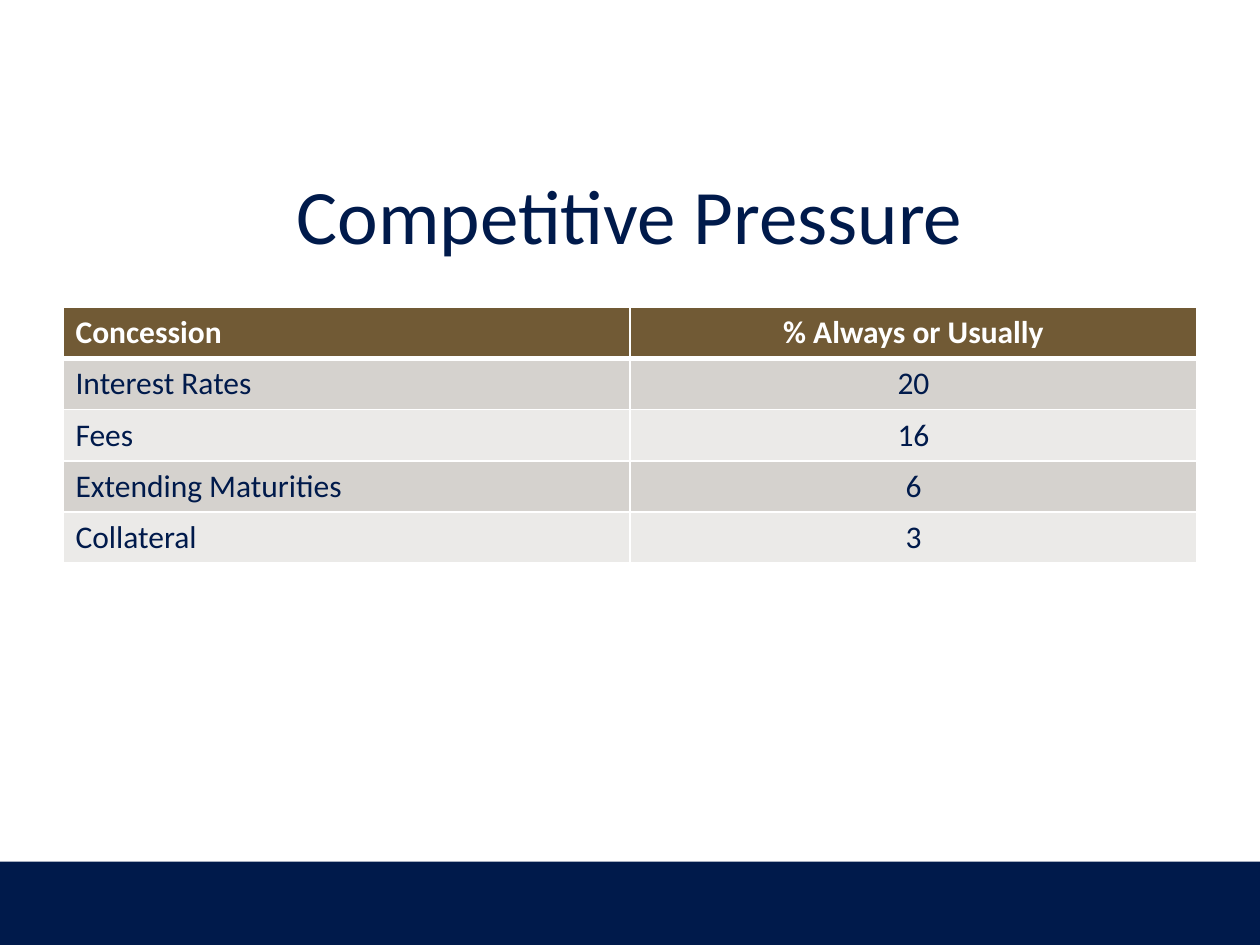
from lxml import etree
from pptx import Presentation
from pptx import util as u
from pptx.dml.color import RGBColor
from pptx.enum import shapes, text
from pptx.oxml import ns

NAVY, BROWN, WHITE = "001A4B", "715A35", "FFFFFF"
BANDS = ("D5D2CE", "EBEAE8")
ROWS = [
    ("Concession", "% Always or Usually"),
    ("Interest Rates", "20"),
    ("Fees", "16"),
    ("Extending Maturities", "6"),
    ("Collateral", "3"),
]
MARGIN, CONTENT_WIDTH = u.Cm(1.27), u.Cm(22.86)


def color(value):
    return RGBColor.from_string(value)


def paint(item, value):
    item.fill.solid()
    item.fill.fore_color.rgb = color(value)


def write(frame, words, align, shade, **formats):
    para = frame.paragraphs[0]
    para.alignment = align
    span = para.add_run()
    span.text = words
    span.font.color.rgb = color(shade)
    for name, value in {"name": "Calibri", **formats}.items():
        setattr(span.font, name, value)


def add_footer_band(page, deck):
    height = u.Cm(1.68)
    band = page.shapes.add_shape(
        shapes.MSO_SHAPE.RECTANGLE, 0, deck.slide_height - height, deck.slide_width, height)
    band.shadow.inherit = False
    paint(band, NAVY)
    band.line.fill.background()


def add_title(page, words):
    box = page.shapes.add_textbox(MARGIN, u.Cm(2.72), CONTENT_WIDTH, u.Cm(3.18))
    frame = box.text_frame
    frame.word_wrap = True
    frame.vertical_anchor = text.MSO_ANCHOR.MIDDLE
    write(frame, words, text.PP_ALIGN.CENTER, NAVY, size=u.Pt(44))


def add_borders(cell, widths):
    """Draw white cell borders; widths maps each side (L, R, T, B) to points."""
    properties = cell._tc.get_or_add_tcPr()
    for side, width in widths.items():
        line = etree.SubElement(properties, ns.qn(f"a:ln{side}"), w=str(u.Pt(width)))
        fill = etree.SubElement(line, ns.qn("a:solidFill"))
        etree.SubElement(fill, ns.qn("a:srgbClr"), val=WHITE)


def add_concession_table(page):
    row_height = u.Cm(1.03)
    table = page.shapes.add_table(
        len(ROWS), len(ROWS[0]), MARGIN, u.Cm(6.2), CONTENT_WIDTH, row_height * len(ROWS)).table
    aligns = (text.PP_ALIGN.LEFT, text.PP_ALIGN.CENTER)
    for r, row in enumerate(ROWS):
        header = r == 0
        for c, words in enumerate(row):
            cell = table.cell(r, c)
            add_borders(cell, {"L": 1, "R": 1, "T": 3 if r == 1 else 1, "B": 3 if header else 1})
            paint(cell, BROWN if header else BANDS[(r - 1) % 2])
            write(cell.text_frame, words, aligns[c], WHITE if header else NAVY,
                  size=u.Pt(18), bold=header)


def main():
    deck = Presentation()
    deck.slide_width, deck.slide_height = u.Cm(25.4), u.Cm(19.05)
    page = deck.slides.add_slide(deck.slide_layouts[6])
    add_footer_band(page, deck)
    add_title(page, "Competitive Pressure")
    add_concession_table(page)
    deck.save("out.pptx")


if __name__ == "__main__":
    main()
